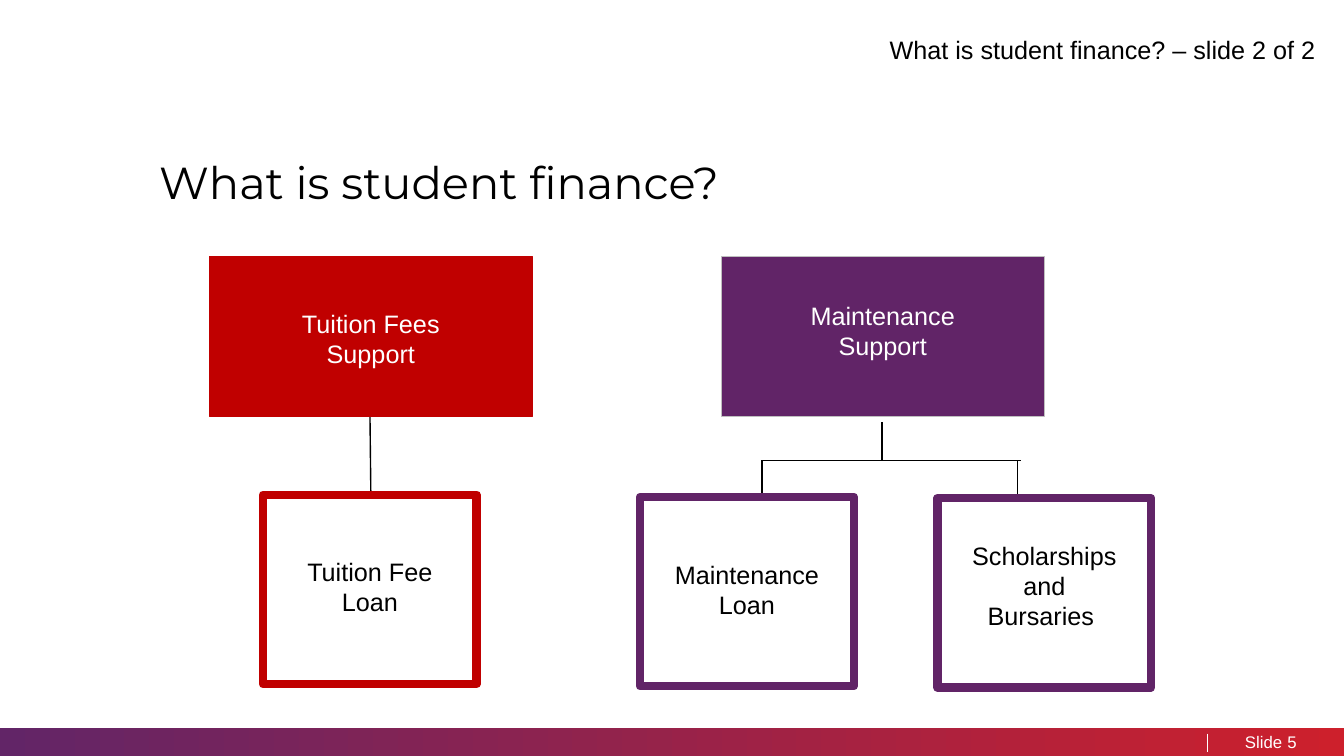
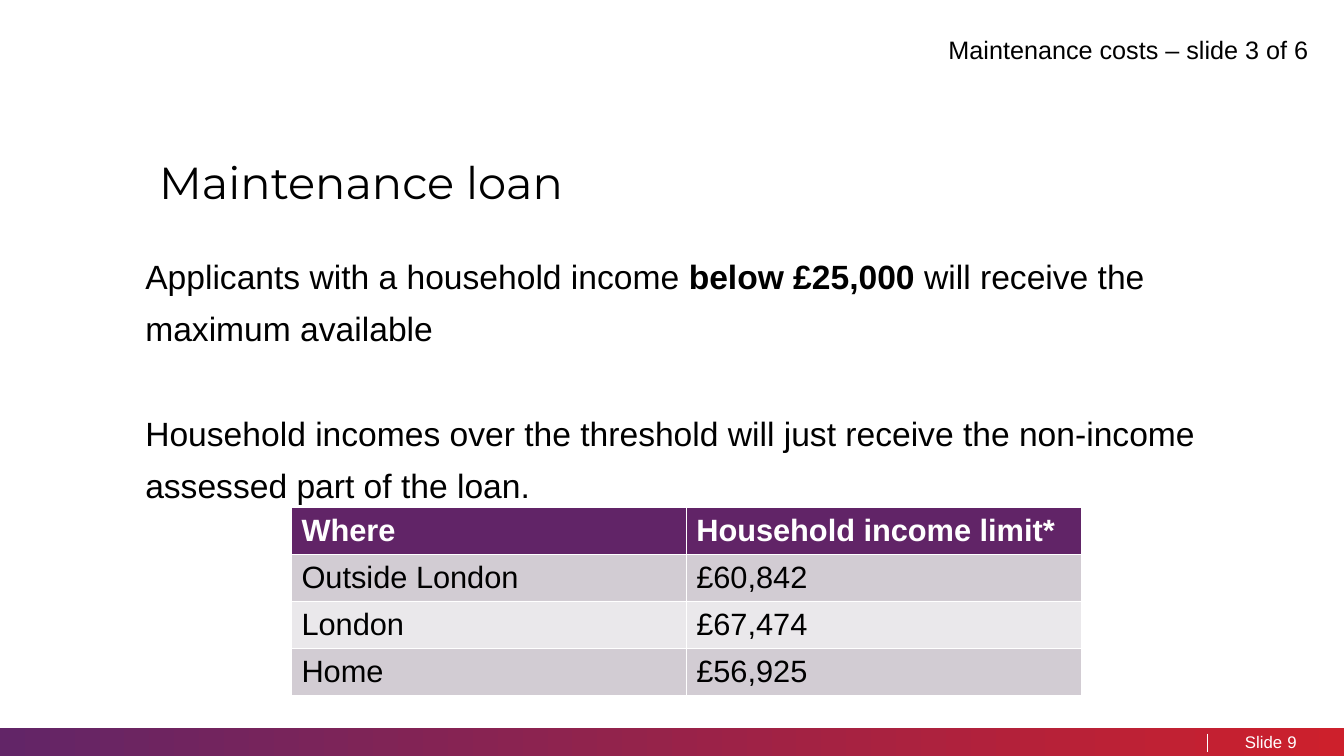
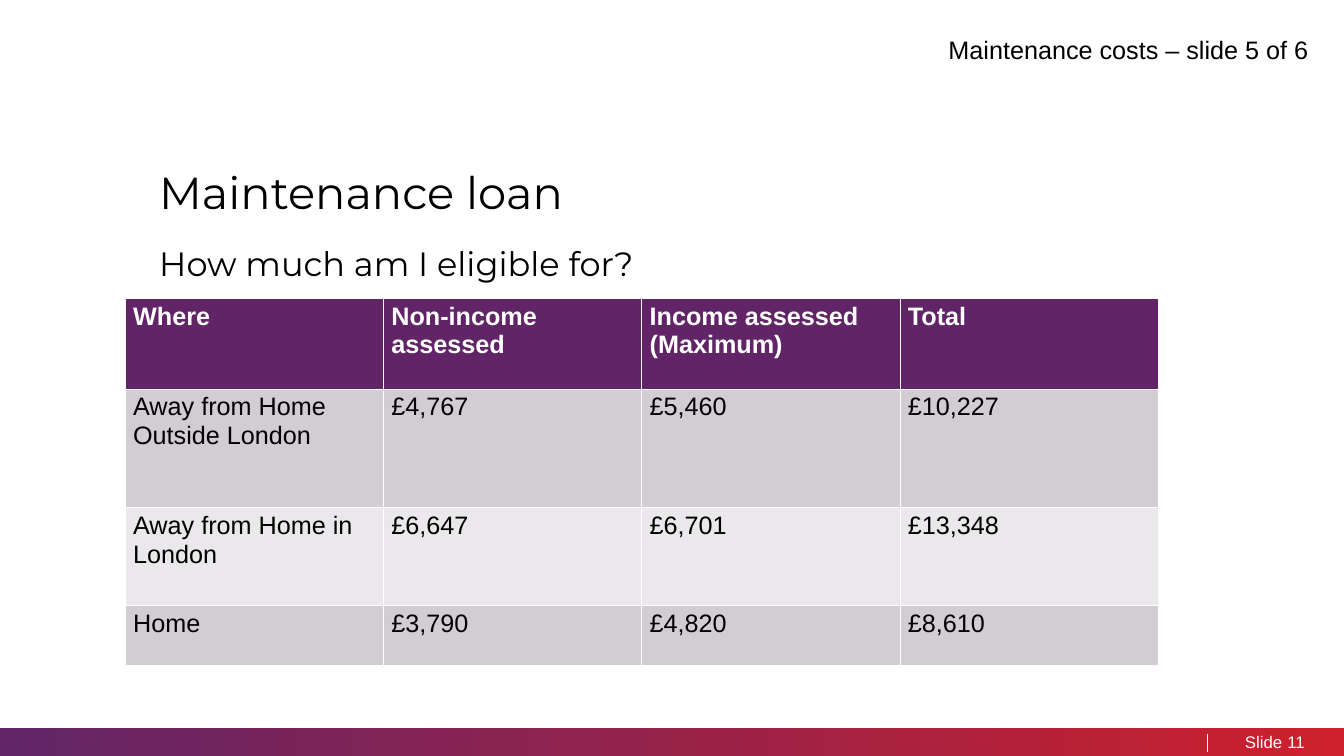
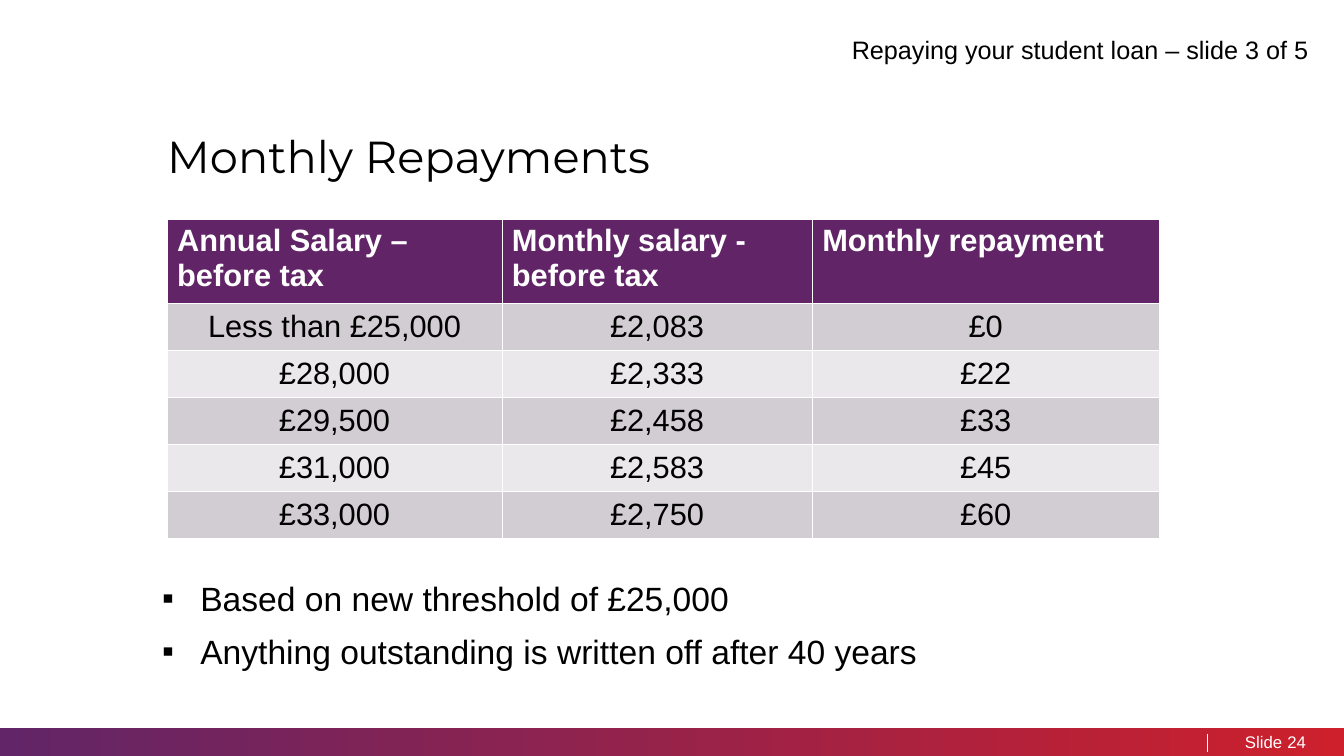
from dataclasses import dataclass
from itertools import chain, repeat
from typing import NamedTuple, Sequence

from lxml.etree import SubElement
from pptx import Presentation
from pptx.dml.color import RGBColor
from pptx.enum.shapes import MSO_CONNECTOR as Connector, MSO_SHAPE as Preset
from pptx.enum.text import MSO_ANCHOR as Anchor, PP_ALIGN as Align
from pptx.oxml.ns import qn
from pptx.slide import Slide
from pptx.text.text import TextFrame
from pptx.util import Emu, Pt

# The slide is a grid of 32 columns by 18 rows of square cells.
COLUMNS, ROWS = 32, 18
CELL = 381000

BLACK, WHITE = "000000", "FFFFFF"
PURPLE, RED, SILVER = "612467", "C00000", "BFBFBF"
BAND_START, BAND_END = "622567", "CD202C"
STRIPES = ("D2CCD3", "EAE8EB")
BODY_FONT, TITLE_FONT = "Arial", "Montserrat"
LOOSE = 1.3


class Area(NamedTuple):
    left: float
    top: float
    width: float
    height: float


class Insets(NamedTuple):
    left: float = 0.24
    top: float = 0.12
    right: float = 0.24
    bottom: float = 0.12


class Segment(NamedTuple):
    x1: float
    y1: float
    x2: float
    y2: float


FLUSH = Insets(left=0, right=0)
BODY_INSETS = Insets(0, 0.38, 0, 0)


@dataclass(frozen=True)
class Node:
    """A box of the diagram; lift raises its text above the middle."""
    text: str
    area: Area
    fill: str
    line: str
    line_width: float
    color: str
    side: float
    lift: float = 0


@dataclass(frozen=True)
class Grid:
    left: float
    top: float
    widths: Sequence[float]
    heights: Sequence[float]
    rows: Sequence[Sequence[str]]
    size: float = 22
    insets: Insets = Insets()
    head_anchor: Anchor = Anchor.TOP
    body_anchor: Anchor = Anchor.MIDDLE
    body_align: Align = Align.LEFT


def cells(count: float) -> Emu:
    return Emu(round(count * CELL))


def rgb(value: str) -> RGBColor:
    return RGBColor.from_string(value)


def write(frame: TextFrame, text: str, *, size: float = 18, font: str = BODY_FONT,
          color: str = BLACK, bold: bool = False, align: Align = Align.LEFT,
          spacing: float = 1.0, gap: float = 0, bullet: str = "") -> None:
    """Write one paragraph per line of text; **marks** enclose bold words."""
    for index, line in enumerate(text.split("\n")):
        para = frame.add_paragraph() if index else frame.paragraphs[0]
        if bullet:
            properties = para._p.get_or_add_pPr()
            indent = cells(0.91)
            properties.set("marL", str(indent))
            properties.set("indent", str(-indent))
            SubElement(properties, qn("a:buFont"), typeface=BODY_FONT)
            SubElement(properties, qn("a:buChar"), char=bullet)
        para.alignment = align
        para.line_spacing = spacing
        if index and gap:
            para.space_before = Pt(gap)
        for part, words in enumerate(line.split("**")):
            span = para.add_run()
            span.text = words
            span.font.size = Pt(size)
            span.font.name = font
            span.font.bold = bold or part % 2 == 1
            span.font.color.rgb = rgb(color)


def set_frame(frame: TextFrame, insets: Insets, anchor: Anchor) -> None:
    frame.word_wrap = True
    frame.vertical_anchor = anchor
    frame.margin_left, frame.margin_top, frame.margin_right, frame.margin_bottom = map(
        cells, insets)


def add_text(page: Slide, area: Area, text: str, *, insets: Insets = FLUSH,
             anchor: Anchor = Anchor.TOP, **style) -> None:
    box = page.shapes.add_textbox(*map(cells, area))
    set_frame(box.text_frame, insets, anchor)
    write(box.text_frame, text, **style)


def add_line(page: Slide, segment: Segment, color: str = BLACK) -> None:
    line = page.shapes.add_connector(Connector.STRAIGHT, *map(cells, segment))
    line.line.color.rgb = rgb(color)
    line.line.width = Pt(1)
    SubElement(line._element.spPr, qn("a:effectLst"))


def add_node(page: Slide, node: Node) -> None:
    box = page.shapes.add_shape(Preset.RECTANGLE, *map(cells, node.area))
    box.shadow.inherit = False
    box.fill.solid()
    box.fill.fore_color.rgb = rgb(node.fill)
    box.line.color.rgb = rgb(node.line)
    box.line.width = Pt(node.line_width)
    insets = Insets(node.side, 0, node.side, 2 * node.lift)
    set_frame(box.text_frame, insets, Anchor.MIDDLE)
    write(box.text_frame, node.text, color=node.color, align=Align.CENTER)


def add_grid(page: Slide, grid: Grid) -> None:
    area = Area(grid.left, grid.top, sum(grid.widths), sum(grid.heights))
    table = page.shapes.add_table(
        len(grid.rows), len(grid.widths), *map(cells, area)).table
    for column, width in zip(table.columns, grid.widths):
        column.width = cells(width)
    for row, height in zip(table.rows, grid.heights):
        row.height = cells(height)
    for row_index, texts in enumerate(grid.rows):
        head = row_index == 0
        for column_index, text in enumerate(texts):
            cell = table.cell(row_index, column_index)
            properties = cell._tc.get_or_add_tcPr()
            for edge in ("a:lnL", "a:lnR", "a:lnT", "a:lnB"):
                border = SubElement(properties, qn(edge), w=str(Pt(0.5)))
                SubElement(SubElement(border, qn("a:solidFill")), qn("a:srgbClr"), val=WHITE)
            cell.fill.solid()
            cell.fill.fore_color.rgb = rgb(PURPLE if head else STRIPES[(row_index - 1) % 2])
            (cell.margin_left, cell.margin_top,
             cell.margin_right, cell.margin_bottom) = map(cells, grid.insets)
            cell.vertical_anchor = grid.head_anchor if head else grid.body_anchor
            write(cell.text_frame, text, size=grid.size, bold=head,
                  color=WHITE if head else BLACK,
                  align=Align.LEFT if head else grid.body_align)


def add_footer(page: Slide, number: int) -> None:
    top, height = 17.33, 0.67
    band = page.shapes.add_shape(
        Preset.RECTANGLE, *map(cells, Area(0, top, COLUMNS, height)))
    band.shadow.inherit = False
    band.line.fill.background()
    band.fill.gradient()
    band.fill.gradient_angle = 0
    for stop, color, position in zip(
            band.fill.gradient_stops, (BAND_START, BAND_END), (0, 1)):
        stop.color.rgb = rgb(color)
        stop.position = position
    style = dict(anchor=Anchor.MIDDLE, size=12, color=WHITE)
    add_text(page, Area(29.5, top, 1.03, height), "Slide", align=Align.RIGHT, **style)
    add_text(page, Area(30.65, top, 0.79, height), str(number), **style)
    add_line(page, Segment(28.75, 17.47, 28.75, 17.9), WHITE)


def add_page(deck, number: int, header: str, title: str,
             title_left: float, title_top: float) -> Slide:
    """Add a slide with the footer, the corner header and the title."""
    page = deck.slides.add_slide(deck.slide_layouts[6])
    add_footer(page, number)
    add_text(page, Area(16.32, 0, 15, 2.33), header, insets=Insets(0, 0, 0, 0.19),
             anchor=Anchor.MIDDLE, align=Align.RIGHT, spacing=LOOSE)
    add_text(page, Area(title_left, title_top, 27.55, 1.94), title,
             size=32, font=TITLE_FONT, spacing=LOOSE)
    return page


def root(text: str, left: float, fill: str, line: str, lift: float = 0) -> Node:
    return Node(text, Area(left, 6.1, 7.68, 3.82), fill, line, 0.5, WHITE, 2.06, lift)


def leaf(text: str, left: float, top: float, line: str, lift: float) -> Node:
    return Node(text, Area(left, top, 5.09, 4.51), WHITE, line, 6, BLACK, 0.77, lift)


def add_finance_page(deck) -> None:
    page = add_page(deck, 5, "What is student finance? – slide 2 of 2",
                    "What is student finance?", 3.79, 3.19)
    fork = 10.97
    branches = (
        Segment(8.81, 9.91, 8.83, 11.78),
        Segment(21, 10.06, 21, fork),
        Segment(18.12, fork, 24.31, fork),
        Segment(18.14, fork, 18.14, 11.83),
        Segment(24.22, fork, 24.22, 11.86),
    )
    nodes = (
        root("Tuition Fees Support", 4.99, RED, RED, lift=-0.05),
        root("Maintenance Support", 17.18, PURPLE, SILVER, lift=0.14),
        leaf("Tuition Fee Loan", 6.26, 11.78, RED, lift=0.08),
        leaf("Maintenance Loan", 15.24, 11.83, PURPLE, lift=0.06),
        leaf("Scholarships and Bursaries ", 22.32, 11.86, PURPLE, lift=0.18),
    )
    for branch in branches:
        add_line(page, branch)
    for node in nodes:
        add_node(page, node)


def add_threshold_page(deck) -> None:
    page = add_page(deck, 9, "Maintenance costs – slide 3 of 6 ",
                    "Maintenance loan", 3.79, 3.17)
    add_text(page, Area(3.46, 5.42, 25.61, 6.6),
             "Applicants with a household income **below £25,000 **"
             "will receive the maximum available\n"
             "Household incomes over the threshold will just receive "
             "the non-income assessed part of the loan.",
             insets=BODY_INSETS, size=24, spacing=LOOSE, gap=37.5)
    add_grid(page, Grid(
        6.94, 12.07, (9.4,) * 2, (1.06,) * 4,
        (("Where", "Household income limit*"),
         ("Outside London", "£60,842"),
         ("London", "£67,474"),
         ("Home", "£56,925")),
        head_anchor=Anchor.MIDDLE))


def add_eligibility_page(deck) -> None:
    page = add_page(deck, 11, "Maintenance costs – slide 5 of 6 ",
                    "Maintenance loan", 3.79, 3.43)
    add_text(page, Area(3.79, 5.38, 27.55, 1.06), "How much am I eligible for?",
             size=24, font=TITLE_FONT, spacing=LOOSE)
    add_grid(page, Grid(
        2.98, 7.1, (6.15,) * 4, (2.16, 2.83, 2.33, 1.43),
        (("Where", "Non-income assessed", "Income assessed\n(Maximum)", "Total"),
         ("Away from Home Outside London", "£4,767", "£5,460", "£10,227"),
         ("Away from Home in London", "£6,647", "£6,701", "£13,348"),
         ("Home", "£3,790", "£4,820", "£8,610")),
        size=18, insets=Insets(0.19, 0.1, 0.19, 0.1), body_anchor=Anchor.TOP))


def add_repayment_page(deck) -> None:
    page = add_page(deck, 24, "Repaying your student loan – slide 3 of 5 ",
                    "Monthly Repayments", 3.98, 2.57)
    add_grid(page, Grid(
        3.98, 5.21, (7.97, 7.39, 8.26), tuple(chain((1.86,), repeat(1.06, 5))),
        (("Annual Salary – before tax", "Monthly salary - before tax", "Monthly repayment"),
         ("Less than £25,000", "£2,083", "£0"),
         ("£28,000", "£2,333", "£22"),
         ("£29,500", "£2,458", "£33"),
         ("£31,000", "£2,583", "£45"),
         ("£33,000", "£2,750", "£60")),
        body_align=Align.CENTER))
    add_text(page, Area(3.86, 13.1, 24.94, 2.95),
             "Based on new threshold of £25,000\n"
             "Anything outstanding is written off after 40 years",
             insets=BODY_INSETS, size=24, spacing=LOOSE, bullet="▪")


def main() -> None:
    deck = Presentation()
    deck.slide_width, deck.slide_height = cells(COLUMNS), cells(ROWS)
    add_finance_page(deck)
    add_threshold_page(deck)
    add_eligibility_page(deck)
    add_repayment_page(deck)
    deck.save("out.pptx")


if __name__ == "__main__":
    main()
